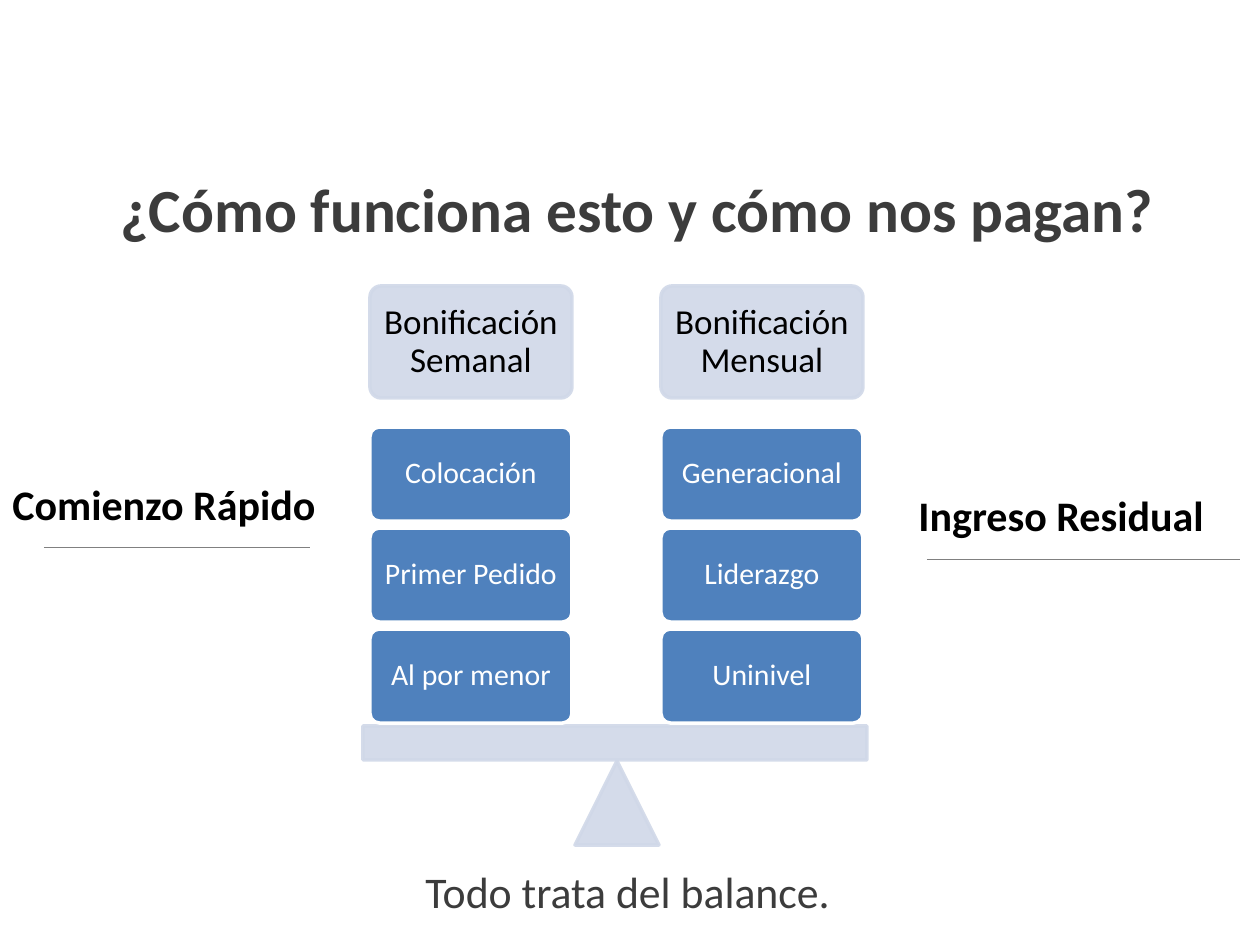
import pptx
import pptx.util
import pptx.dml.color
import pptx.enum.shapes
import pptx.enum.text
import pptx.oxml.ns
from dataclasses import dataclass
from lxml import etree
from typing import Any

SCALE = 914400 / 126
KIND = pptx.enum.shapes.MSO_SHAPE
ALIGN = pptx.enum.text.PP_ALIGN
ANCHOR = pptx.enum.text.MSO_ANCHOR
PALE, BLUE, WHITE = "D0D8E8", "4F81BD", "FFFFFF"
DARK, BLACK, GRAY = "3C3C3C", "000000", "808080"


@dataclass
class Box:
    left: int
    top: int
    width: int
    height: int


@dataclass
class Stack:
    left: int
    head: str
    cards: tuple[str, ...]


@dataclass
class Label:
    text: str
    box: Box
    size: int
    color: str
    bold: bool


@dataclass
class Rule:
    left: int
    right: int
    top: int


STACKS = (
    Stack(370, "Bonificación Semanal", ("Colocación", "Primer Pedido", "Al por menor")),
    Stack(661, "Bonificación Mensual", ("Generacional", "Liderazgo", "Uninivel")),
)
LABELS = (
    Label("Todo trata del balance.", Box(413, 859, 847, 66), 25, DARK, False),
    Label("Comienzo Rápido", Box(0, 472, 353, 63), 24, BLACK, True),
    Label("Ingreso Residual", Box(906, 483, 335, 63), 24, BLACK, True),
)
RULES = (Rule(927, 1240, 559), Rule(44, 310, 547))
CARD_TOP, CARD_STEP = 427, 101


def px(count: int) -> int:
    return round(count * SCALE)


def rgb(code: str) -> pptx.dml.color.RGBColor:
    return pptx.dml.color.RGBColor.from_string(code)


def apply(item: Any, form: dict[str, Any]) -> None:
    for name, value in form.items():
        setattr(item, name, value)


def place(box: Box) -> tuple[int, ...]:
    return px(box.left), px(box.top), px(box.width), px(box.height)


def fade(fill: Any) -> None:
    tag = pptx.oxml.ns.qn("a:srgbClr")
    for node in fill.iter(tag):
        etree.SubElement(node, pptx.oxml.ns.qn("a:alpha"), val="90000")


def write(frame: Any, text: str, size: int, color: str, bold: bool = False) -> Any:
    frame.text = text
    para = frame.paragraphs[0]
    apply(para.font, {"name": "Calibri", "size": pptx.util.Pt(size), "bold": bold})
    para.font.color.rgb = rgb(color)
    return para


def block(slide: Any, kind: Any, box: Box, fill: str, edge: str) -> Any:
    shape = slide.shapes.add_shape(kind, *place(box))
    shape.shadow.inherit = False
    shape.fill.solid()
    shape.fill.fore_color.rgb = rgb(fill)
    shape.line.color.rgb = rgb(edge)
    shape.line.width = pptx.util.Pt(2)
    if fill == PALE:
        fade(shape.element.spPr)
    return shape


def card(slide: Any, box: Box, text: str, fill: str, edge: str,
         size: int, color: str, inset: int) -> None:
    shape = block(slide, KIND.ROUNDED_RECTANGLE, box, fill, edge)
    shape.adjustments[0] = 0.1
    frame = shape.text_frame
    sides = ("left", "right", "top", "bottom")
    apply(frame, {f"margin_{side}": px(inset) for side in sides})
    apply(frame, {"word_wrap": True, "vertical_anchor": ANCHOR.MIDDLE})
    para = write(frame, text, size, color)
    apply(para, {"alignment": ALIGN.CENTER, "line_spacing": 0.9})


def pile(slide: Any, stack: Stack) -> None:
    card(slide, Box(stack.left, 286, 202, 112), stack.head, PALE, PALE, 20, BLACK, 10)
    for row, text in enumerate(stack.cards):
        box = Box(stack.left, CARD_TOP + row * CARD_STEP, 202, 94)
        card(slide, box, text, BLUE, WHITE, 17, WHITE, 9)


def note(slide: Any, label: Label) -> None:
    frame = slide.shapes.add_textbox(*place(label.box)).text_frame
    frame.word_wrap = True
    write(frame, label.text, label.size, label.color, label.bold)


def stroke(slide: Any, rule: Rule) -> None:
    kind = pptx.enum.shapes.MSO_CONNECTOR.STRAIGHT
    line = slide.shapes.add_connector(
        kind, px(rule.left), px(rule.top), px(rule.right), px(rule.top))
    line.line.color.rgb = rgb(GRAY)
    line.line.width = pptx.util.Pt(0.5)
    etree.SubElement(line.element.spPr, pptx.oxml.ns.qn("a:effectLst"))


def head(slide: Any, text: str, box: Box) -> None:
    title = slide.shapes.title
    apply(title, dict(zip(("left", "top", "width", "height"), place(box))))
    frame = title.text_frame
    para = write(frame, text, 35, DARK, True)
    para.alignment = ALIGN.LEFT
    apply(frame, {"word_wrap": True, "vertical_anchor": ANCHOR.TOP,
                  "auto_size": pptx.enum.text.MSO_AUTO_SIZE.NONE})


def main() -> None:
    deck = pptx.Presentation()
    apply(deck, {"slide_width": px(1260), "slide_height": px(945)})
    slide = deck.slides.add_slide(deck.slide_layouts[5])
    head(slide, "¿Cómo funciona esto y cómo nos pagan?", Box(108, 165, 1246, 161))
    block(slide, KIND.ISOSCELES_TRIANGLE, Box(575, 761, 84, 84), PALE, PALE)
    block(slide, KIND.RECTANGLE, Box(363, 726, 504, 34), PALE, PALE)
    for stack in STACKS:
        pile(slide, stack)
    for label in LABELS:
        note(slide, label)
    for rule in RULES:
        stroke(slide, rule)
    deck.save("out.pptx")


if __name__ == "__main__":
    main()
